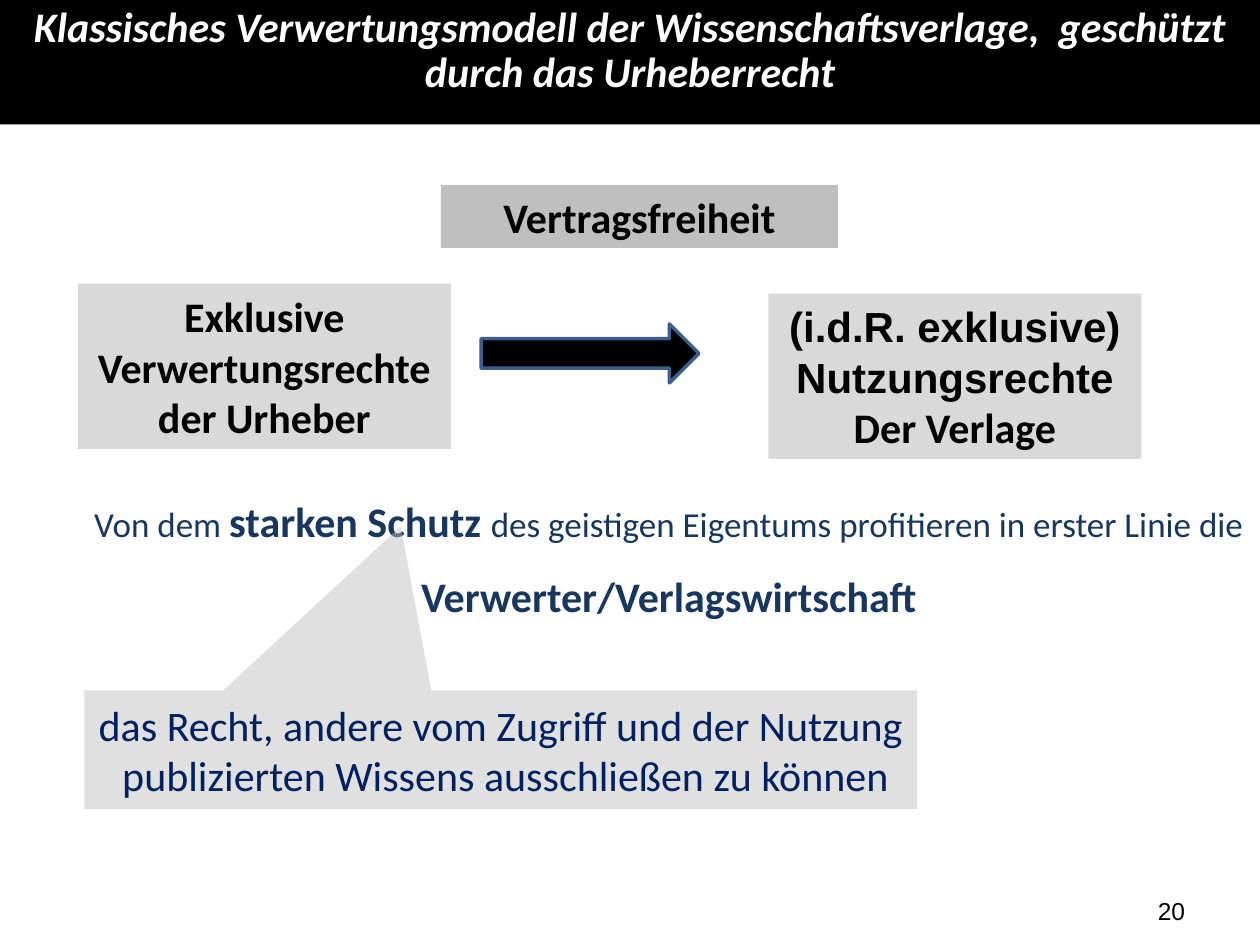
from dataclasses import dataclass

from lxml.etree import SubElement
from pptx import Presentation
from pptx.dml.color import RGBColor
from pptx.enum.shapes import MSO_SHAPE as Kind
from pptx.enum.text import MSO_ANCHOR as Anchor, MSO_AUTO_SIZE as Fit, PP_ALIGN as Align
from pptx.oxml.ns import qn
from pptx.util import Cm, Pt

HUES = {
    "black": "000000",
    "white": "FFFFFF",
    "light": "D9D9D9",
    "grey": "BFBFBF",
    "edge": "3A5F8C",
    "blue": "17375E",
    "navy": "002060",
}


@dataclass
class Run:
    text: str
    size: int = 24
    bold: bool = True
    font: str = "Calibri"
    hue: str = "black"
    slant: bool = False


@dataclass
class Box:
    """A filled shape; place is left, top, width, height in cm."""
    place: tuple
    fill: str
    lines: list
    kind: Kind = Kind.RECTANGLE


def tint(name: str) -> RGBColor:
    return RGBColor.from_string(HUES[name])


def move(shape, place: tuple) -> None:
    shape.left, shape.top, shape.width, shape.height = map(Cm, place)


def write(shape, lines: list, align=Align.CENTER, gap: float = 1.0,
          anchor=Anchor.TOP) -> None:
    """Set one paragraph for each list of runs."""
    frame = shape.text_frame
    frame.word_wrap = True
    frame.auto_size = Fit.NONE
    frame.vertical_anchor = anchor
    for i, runs in enumerate(lines):
        para = frame.add_paragraph() if i else frame.paragraphs[0]
        para.alignment = align
        para.line_spacing = gap
        for item in runs:
            run = para.add_run()
            run.text = item.text
            font = run.font
            font.name, font.size = item.font, Pt(item.size)
            font.bold, font.italic = item.bold, item.slant
            font.color.rgb = tint(item.hue)


def paint(shape, hue: str) -> None:
    shape.fill.solid()
    shape.fill.fore_color.rgb = tint(hue)


def draw(slide, box: Box):
    shape = slide.shapes.add_shape(box.kind, *map(Cm, box.place))
    shape.shadow.inherit = False
    paint(shape, box.fill)
    shape.line.fill.background()
    write(shape, box.lines, anchor=Anchor.MIDDLE)
    return shape


def label(slide, place: tuple, lines: list, **style):
    shape = slide.shapes.add_textbox(*map(Cm, place))
    write(shape, lines, **style)


def fade(shape, share: int) -> None:
    """Make the solid fill opaque by share percent only."""
    hue = shape.fill._xPr.find(".//" + qn("a:srgbClr"))
    SubElement(hue, qn("a:alpha")).set("val", str(share * 1000))


BOXES = [
    Box((1.57, 5.72, 7.52, 3.33), "light",
        [[Run("Exklusive Verwertungsrechte")], [Run("der Urheber")]]),
    Box((8.89, 3.73, 8, 1.27), "grey", [[Run("Vertragsfreiheit")]]),
    Box((15.49, 5.92, 7.52, 3.33), "light",
        [[Run("(i.d.R. exklusive) Nutzungsrechte", font="Arial")],
         [Run("Der Verlage")]]),
]
ARROW = Box((9.7, 6.53, 4.39, 1.19), "black", [], Kind.RIGHT_ARROW)
NOTE = Box((1.7, 13.92, 16.79, 2.39), "grey",
           [[Run("das Recht, andere vom Zugriff und der Nutzung  publizierten "
                 "Wissens ausschließen zu können", bold=False, hue="navy")]],
           Kind.RECTANGULAR_CALLOUT)
CLAIM = [
    Run("Von dem ", 20, False, hue="blue"),
    Run("starken Schutz ", hue="blue"),
    Run("des geistigen Eigentums profitieren in erster Linie die ", 20, False,
        hue="blue"),
    Run("Verwerter/Verlagswirtschaft", hue="blue"),
]


def main() -> None:
    deck = Presentation()
    deck.slide_width, deck.slide_height = Cm(25.4), Cm(19.05)
    slide = deck.slides.add_slide(deck.slide_layouts[5])

    title = slide.shapes.title
    move(title, (0, 0, 25.4, 2.51))
    paint(title, "black")
    write(title, [[Run("Klassisches Verwertungsmodell der Wissenschaftsverlage,  "
                       "geschützt durch das Urheberrecht",
                       hue="white", slant=True)]], gap=0.9)

    for box in BOXES:
        draw(slide, box)
    arrow = draw(slide, ARROW)
    arrow.line.color.rgb = tint("edge")
    arrow.line.width = Pt(2)

    label(slide, (1.57, 9.35, 23.83, 3.18), [CLAIM], gap=1.5)
    note = draw(slide, NOTE)
    note.adjustments[0], note.adjustments[1] = -0.12, -1.885
    fade(note, 48)
    label(slide, (23.09, 17.93, 1.6, 0.86), [[Run("20", 14, False, "Arial")]],
          align=Align.LEFT)
    deck.save("out.pptx")


if __name__ == "__main__":
    main()
